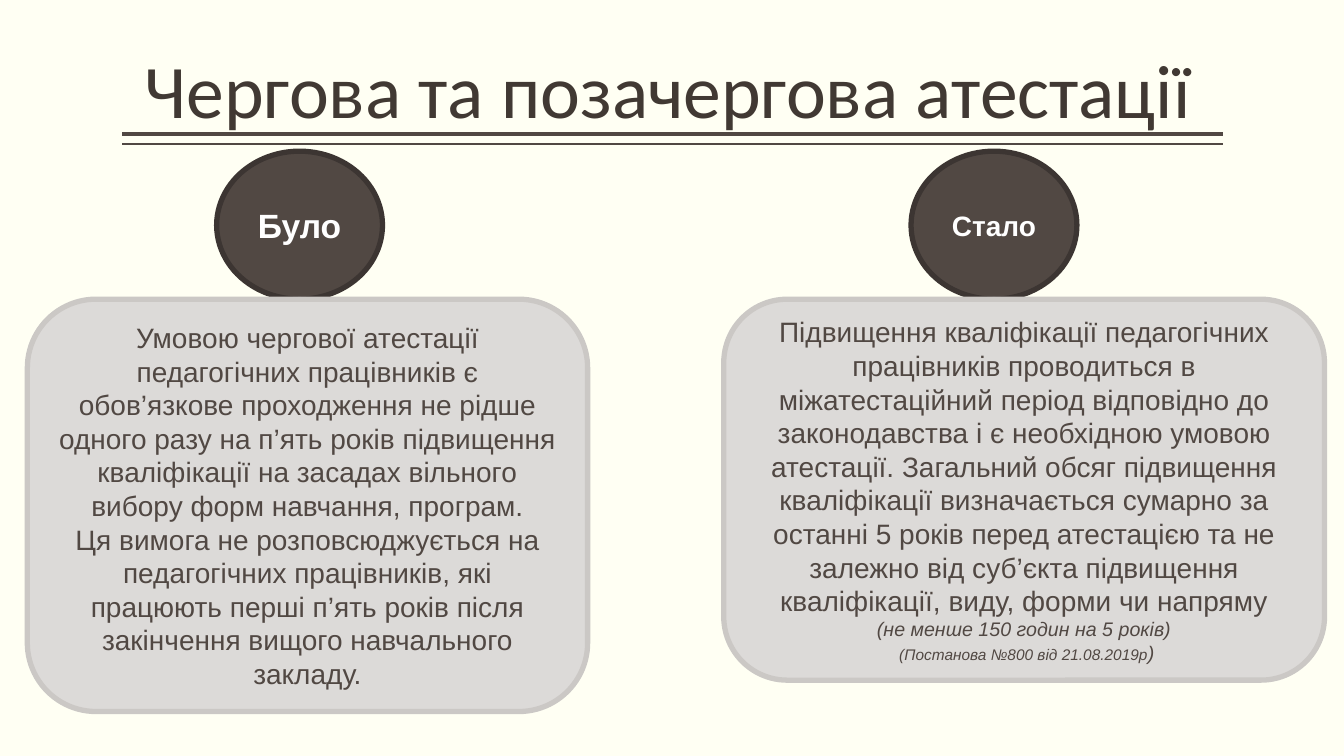
from pptx import Presentation
from pptx.dml.color import RGBColor
from pptx.enum.shapes import MSO_CONNECTOR, MSO_SHAPE
from pptx.enum.text import MSO_ANCHOR, PP_ALIGN
from pptx.oxml.ns import qn
from pptx.util import Cm, Pt
from lxml.etree import SubElement

PAPER, BROWN, DARK, GREY, EDGE = "FFFFF3", "514843", "3C3532", "DCDAD8", "CBC8C5"

BEFORE = [
    (20, False, ["Умовою чергової атестації педагогічних працівників є обов’язкове "
                 "проходження не рідше одного разу на п’ять років підвищення "
                 "кваліфікації на засадах вільного вибору форм навчання, програм."]),
    (20, False, ["Ця вимога не розповсюджується на педагогічних працівників, які "
                 "працюють перші п’ять років після закінчення вищого навчального "
                 "закладу."]),
]
AFTER = [
    (20, False, ["Підвищення кваліфікації педагогічних працівників проводиться в "
                 "міжатестаційний період відповідно до законодавства і є необхідною "
                 "умовою атестації. Загальний обсяг підвищення кваліфікації "
                 "визначається сумарно за останні 5 років перед атестацією та не "
                 "залежно від суб’єкта підвищення кваліфікації, виду, форми чи "
                 "напряму"]),
    (14, True, ["(не менше 150 годин на 5 років)"]),
    (14, True, [" ", "(Постанова №800 від 21.08.2019р", ")"]),
]


def color(code):
    return RGBColor.from_string(code)


def style(para, size, code, name="Arial", bold=False, italic=False):
    para.alignment = PP_ALIGN.CENTER
    font = para.font
    font.name, font.size, font.bold, font.italic = name, Pt(size), bold, italic
    font.color.rgb = color(code)


def add_title(slide, text):
    box = slide.shapes.add_textbox(Cm(2.13), Cm(0.89), Cm(29.41), Cm(2.64))
    frame = box.text_frame
    frame.word_wrap = True
    frame.vertical_anchor = MSO_ANCHOR.BOTTOM
    frame.margin_left = frame.margin_right = 0
    para = frame.paragraphs[0]
    para.text = text
    para.line_spacing = 0.9
    style(para, 54, "413933", "Calibri")


def add_rule(slide, top, width):
    rule = slide.shapes.add_connector(
        MSO_CONNECTOR.STRAIGHT, Cm(30.81), Cm(top), Cm(3.07), Cm(top))
    rule.line.color.rgb = color(BROWN)
    rule.line.width = Pt(width)
    SubElement(rule.element.spPr, qn("a:effectLst"))


def add_block(slide, kind, place, fill, edge):
    shape = slide.shapes.add_shape(kind, *map(Cm, place))
    shape.shadow.inherit = False
    shape.fill.solid()
    shape.fill.fore_color.rgb = color(fill)
    shape.line.color.rgb = color(edge)
    shape.line.width = Pt(3.78)
    frame = shape.text_frame
    frame.word_wrap = True
    frame.vertical_anchor = MSO_ANCHOR.MIDDLE
    return frame


def add_badge(slide, left, text, size):
    frame = add_block(slide, MSO_SHAPE.OVAL, (left, 3.81, 4.18, 3.73), BROWN, DARK)
    para = frame.paragraphs[0]
    para.text = text
    style(para, size, "FFFFFF", bold=True)


def add_card(slide, left, width, height, paras):
    frame = add_block(slide, MSO_SHAPE.ROUNDED_RECTANGLE,
                      (left, 7.54, width, height), GREY, EDGE)
    for num, (size, italic, parts) in enumerate(paras):
        para = frame.add_paragraph() if num else frame.paragraphs[0]
        style(para, size, BROWN, italic=italic)
        for part in parts:
            run = para.add_run()
            run.text = part
            # The decree reference is set smaller than its brackets
            if part.startswith("(Постанова"):
                run.font.size = Pt(11)


def main():
    deck = Presentation()
    deck.slide_width, deck.slide_height = Cm(33.87), Cm(19.05)
    slide = deck.slides.add_slide(deck.slide_layouts[6])
    slide.background.fill.solid()
    slide.background.fill.fore_color.rgb = color(PAPER)

    # Heading with a double rule
    add_rule(slide, 3.38, 3)
    add_rule(slide, 3.63, 1)
    add_title(slide, "Чергова та позачергова атестації")

    # Badges
    add_badge(slide, 5.46, "Було", 24)
    add_badge(slide, 22.96, "Стало", 20)

    # Cards
    add_card(slide, 0.69, 14.12, 10.39, BEFORE)
    add_card(slide, 18.24, 15.14, 9.6, AFTER)

    deck.save("out.pptx")


if __name__ == "__main__":
    main()
